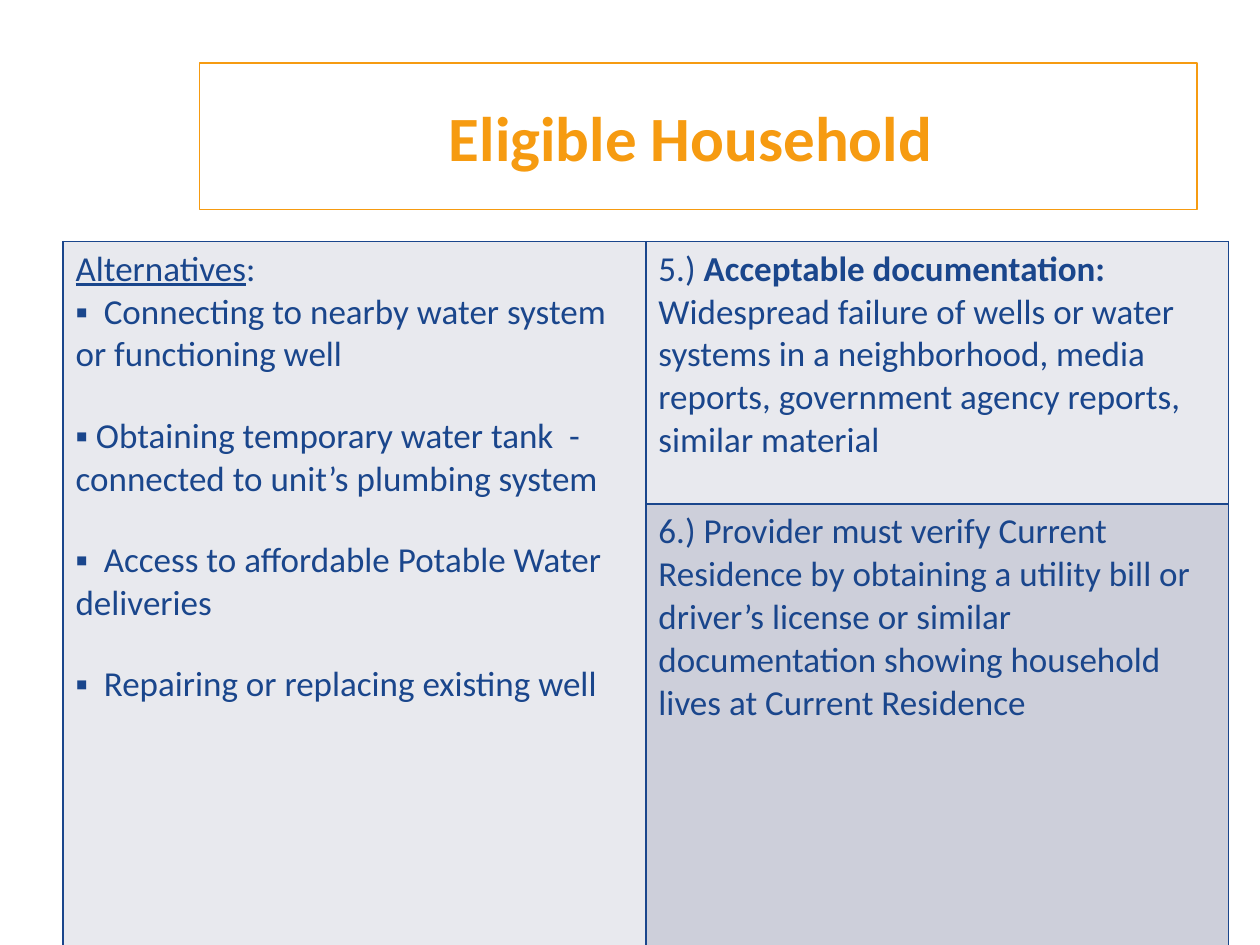
from pptx import Presentation, util as u
from pptx.dml.color import RGBColor
from pptx.enum import shapes, text
from pptx.oxml import parse_xml
from pptx.oxml.ns import nsdecls

HUES = {"gold": "F69B11", "navy": "1A468C", "pale": "E8E9EE", "gray": "CDCFDA"}
WAYS = [
    "▪  Connecting to nearby water system or functioning well",
    "▪ Obtaining temporary water tank  - connected to unit’s plumbing system",
    "▪  Access to affordable Potable Water deliveries",
    "▪  Repairing or replacing existing well",
]
PROOF = ("Widespread failure of wells or water systems in a neighborhood, "
         "media reports, government agency reports, similar material")
CHECK = ("6.) Provider must verify Current Residence by obtaining a utility bill "
         "or driver’s license or similar documentation showing household lives "
         "at Current Residence")


def color(name):
    """Return the named colour."""
    return RGBColor.from_string(HUES[name])


def write(para, words, size=20, hue="navy", bold=False, under=False):
    """Add a formatted run to a paragraph."""
    run = para.add_run()
    run.text = words
    font = run.font
    font.name, font.size = "Calibri", u.Pt(size)
    font.bold, font.underline = bold, under
    font.color.rgb = color(hue)


def title(slide):
    """Draw the framed heading."""
    box = slide.shapes.add_shape(shapes.MSO_SHAPE.RECTANGLE, u.Cm(4.02),
                                 u.Cm(1.27), u.Cm(20.11), u.Cm(2.96))
    box.shadow.inherit = False
    box.fill.background()
    box.line.color.rgb = color("gold")
    box.line.width = u.Pt(0.75)
    frame = box.text_frame
    frame.word_wrap = True
    frame.vertical_anchor = text.MSO_ANCHOR.MIDDLE
    frame.margin_left = frame.margin_top = frame.margin_bottom = 0
    frame.margin_right = u.Cm(0.3)
    para = frame.paragraphs[0]
    para.alignment = text.PP_ALIGN.CENTER
    write(para, "Eligible Household", size=36, hue="gold", bold=True)


def style(cell, hue):
    """Give a cell its borders and fill."""
    props = cell._tc.get_or_add_tcPr()
    for side in "LRTB":
        props.append(parse_xml(
            f'<a:ln{side} {nsdecls("a")} w="12700"><a:solidFill>'
            f'<a:srgbClr val="{HUES["navy"]}"/></a:solidFill></a:ln{side}>'))
    cell.fill.solid()
    cell.fill.fore_color.rgb = color(hue)


def grid(slide):
    """Draw the table with its merged left column."""
    table = slide.shapes.add_table(2, 2, u.Cm(1.27), u.Cm(4.87),
                                   u.Cm(23.5), u.Cm(14.18)).table
    table.rows[0].height, table.rows[1].height = u.Cm(5.29), u.Cm(8.89)
    for row, hues in enumerate([("pale", "pale"), ("pale", "gray")]):
        for col, hue in enumerate(hues):
            style(table.cell(row, col), hue)
    left = table.cell(0, 0)
    left.merge(table.cell(1, 0))
    head = left.text_frame.paragraphs[0]
    write(head, "Alternatives", under=True)
    write(head, ":")
    for order, way in enumerate(WAYS):
        para = left.text_frame.add_paragraph()
        para.space_before = u.Pt(22 if order else 0)
        write(para, way)
    proof = table.cell(0, 1).text_frame.paragraphs[0]
    write(proof, "5.) ")
    write(proof, "Acceptable documentation: ", bold=True)
    write(proof, PROOF)
    write(table.cell(1, 1).text_frame.paragraphs[0], CHECK)


def main():
    """Build and save the slide."""
    deck = Presentation()
    deck.slide_width, deck.slide_height = u.Cm(25.4), u.Cm(19.05)
    slide = deck.slides.add_slide(deck.slide_layouts[6])
    title(slide)
    grid(slide)
    deck.save("out.pptx")


if __name__ == "__main__":
    main()
